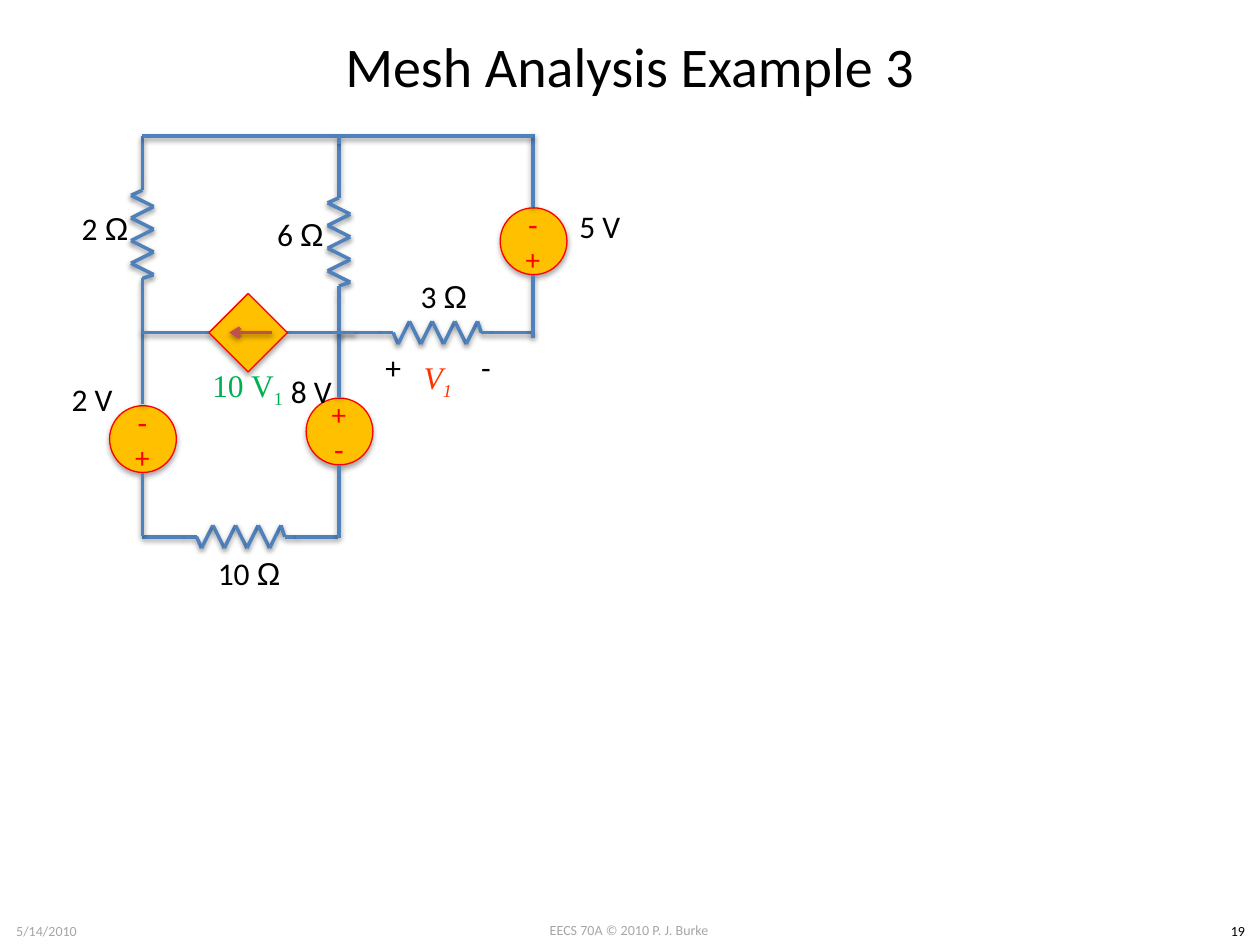
"""Build the mesh analysis circuit slide."""
from dataclasses import dataclass
from itertools import pairwise
from typing import NamedTuple

from lxml import etree
from pptx import Presentation
from pptx.dml.color import RGBColor
from pptx.enum import shapes, text
from pptx.oxml import ns
from pptx.util import Inches, Pt

BLUE, RED, GOLD, BLACK, GRAY = "4F81BD", "FF0000", "FFC000", "000000", "A6A6A6"
SANS, SERIF = "Calibri", "Times New Roman"


class Box(NamedTuple):
    """Left, top, width and height in inches."""
    x: float
    y: float
    w: float
    h: float


class Point(NamedTuple):
    """A place on the slide in inches."""
    x: float
    y: float


@dataclass
class Label:
    """A text with an optional ending in another style."""
    box: Box
    words: str
    end: str = ""
    size: float = 18
    font: str = SANS
    color: str = BLACK
    wrap: bool = False
    sub: bool = False
    slant: bool = False


@dataclass
class Resistor:
    """A zigzag with leads, running right or down from its start."""
    start: Point
    down: bool = False


@dataclass
class Source:
    """A voltage source; sign is 1 when plus is on top, else -1."""
    mid: Point
    sign: int


RESISTORS = [
    Resistor(Point(2.69, 2.64)),
    Resistor(Point(1.13, 4.26)),
    Resistor(Point(1.13, 1.08), True),
    Resistor(Point(2.69, 1.14), True),
]
SOURCES = [
    Source(Point(2.69, 3.42), 1),
    Source(Point(1.13, 3.48), -1),
    Source(Point(4.23, 1.91), -1),
]
WIRES = [
    (Point(4.23, 1.08), Point(1.13, 1.08)),
    (Point(2.69, 1.14), Point(2.69, 1.08)),
    (Point(1.67, 2.64), Point(1.13, 2.64)),
    (Point(2.82, 2.64), Point(2.28, 2.64)),
]
LABELS = [
    Label(Box(3.24, 2.15, 0.58, 0.4), "3 ", "Ω"),
    Label(Box(1.63, 4.35, 0.71, 0.4), "10 ", "Ω"),
    Label(Box(0.55, 1.61, 0.58, 0.4), "2 ", "Ω"),
    Label(Box(2.1, 1.66, 0.58, 0.4), "6 ", "Ω"),
    Label(Box(2.21, 2.9, 0.53, 0.4), "8 V"),
    Label(Box(0.47, 2.97, 0.53, 0.4), "2 V"),
    Label(Box(4.5, 1.59, 0.53, 0.4), "5 V"),
    Label(Box(2.96, 2.71, 0.33, 0.4), "+"),
    Label(Box(3.72, 2.71, 0.28, 0.4), "-"),
    Label(Box(1.37, 2.71, 1.19, 0.73), "10 V", "1", font=SERIF,
          color="00B050", wrap=True, sub=True),
    Label(Box(3.09, 2.71, 0.77, 0.61), "V", "1", font=SERIF,
          color="FF3300", wrap=True, sub=True, slant=True),
    Label(Box(3.83, 7.26, 2.33, 0.24), "EECS 70A © 2010 P. J. Burke",
          size=8, color=GRAY, wrap=True),
    Label(Box(0, 7.27, 0.74, 0.24), "5/14/2010", size=8, color=GRAY, wrap=True),
    Label(Box(9.65, 7.27, 0.35, 0.24), "19", size=8, wrap=True),
]


def rgb(code: str) -> RGBColor:
    """Turn a hex string into a colour."""
    return RGBColor.from_string(code)


def inch(*nums: float) -> list[Inches]:
    """Turn numbers into lengths."""
    return [Inches(n) for n in nums]


def shade(item, alpha: int, dist: float) -> None:
    """Give an item a soft shadow straight below it."""
    fx = etree.SubElement(item._element.spPr, ns.qn("a:effectLst"))
    drop = etree.SubElement(
        fx, ns.qn("a:outerShdw"), blurRad=str(Pt(3.1)), dist=str(Pt(dist)),
        dir="5400000", rotWithShape="0")
    tint = etree.SubElement(drop, ns.qn("a:srgbClr"), val=BLACK)
    etree.SubElement(tint, ns.qn("a:alpha"), val=str(alpha * 1000))


def wire(slide, a: Point, b: Point, color: str = BLUE, arrow: bool = False) -> None:
    """Draw a straight wire, or an arrow, from a to b."""
    line = slide.shapes.add_connector(
        shapes.MSO_CONNECTOR.STRAIGHT, *inch(*a, *b))
    line.line.color.rgb = rgb(color)
    line.line.width = Pt(2)
    if arrow:
        etree.SubElement(line.line._ln, ns.qn("a:tailEnd"), type="arrow")
    shade(line, 38, 1.6)


def body(slide, kind: shapes.MSO_SHAPE, box: Box, turn: float = 0) -> None:
    """Draw the gold body of a source."""
    item = slide.shapes.add_shape(kind, *inch(*box))
    item.rotation = turn
    item.fill.solid()
    item.fill.fore_color.rgb = rgb(GOLD)
    item.line.color.rgb = rgb(RED)
    item.line.width = Pt(0.75)
    shade(item, 35, 1.8)


def write(slide, tag: Label, tight: bool = False) -> None:
    """Write a label in its own text box."""
    frame = slide.shapes.add_textbox(*inch(*tag.box)).text_frame
    frame.word_wrap = tag.wrap
    if tight:
        frame.margin_left = frame.margin_right = 0
        frame.margin_top = frame.margin_bottom = 0
    para = frame.paragraphs[0]
    if tag.wrap:
        frame.vertical_anchor = text.MSO_ANCHOR.MIDDLE
        para.alignment = text.PP_ALIGN.CENTER
    font = para.font
    font.size, font.name, font.italic = Pt(tag.size), tag.font, tag.slant
    font.color.rgb = rgb(tag.color)
    para.add_run().text = tag.words
    if tag.end:
        run = para.add_run()
        run.text = tag.end
        if tag.sub:
            run.font._element.set("baseline", "-25000")
        else:
            run.font.name = "Arial"


def resist(slide, part: Resistor) -> None:
    """Draw a resistor with its two leads."""
    peaks = [(0.47 + 0.09 * i, 0.09 * (-1) ** i) for i in range(8)]
    steps = [(0, 0), (0.34, 0), (0.43, 0), *peaks, (1.13, 0), (1.22, 0), (1.55, 0)]
    x, y = part.start
    spots = [Point(x - off, y + run) if part.down else Point(x + run, y + off)
             for run, off in steps]
    for a, b in pairwise(spots):
        wire(slide, a, b)


def supply(slide, part: Source) -> None:
    """Draw a voltage source with signs and leads."""
    (x, y), sign = part.mid, part.sign
    body(slide, shapes.MSO_SHAPE.OVAL, Box(x - 0.26, y - 0.26, 0.53, 0.53))
    for mark, size, way in (("+", 16.6, -sign), ("-", 18, sign)):
        box = Box(x - 0.13, y + 0.14 * way - 0.16, 0.26, 0.33)
        write(slide, Label(box, mark, size=size, color=RED, wrap=True), True)
    for near, far in ((0.27, 0.85), (-0.27, -0.77)):
        wire(slide, Point(x, y + sign * near), Point(x, y + sign * far))


def main() -> None:
    """Build and save the slide."""
    deck = Presentation()
    deck.slide_width, deck.slide_height = inch(10, 7.5)
    slide = deck.slides.add_slide(deck.slide_layouts[5])
    title = slide.shapes.title
    title.left, title.top, title.width, title.height = inch(0.5, -0.11, 9, 1.25)
    title.text_frame.text = "Mesh Analysis Example 3"
    font = title.text_frame.paragraphs[0].font
    font.size, font.name = Pt(32), SANS
    font.color.rgb = rgb(BLACK)
    for part in RESISTORS:
        resist(slide, part)
    for part in SOURCES:
        supply(slide, part)
    for a, b in WIRES:
        wire(slide, a, b)
    body(slide, shapes.MSO_SHAPE.RECTANGLE, Box(1.75, 2.42, 0.44, 0.44), 315)
    wire(slide, Point(2.16, 2.64), Point(1.82, 2.64), "C0504D", True)
    for tag in LABELS:
        write(slide, tag)
    deck.save("out.pptx")


if __name__ == "__main__":
    main()
